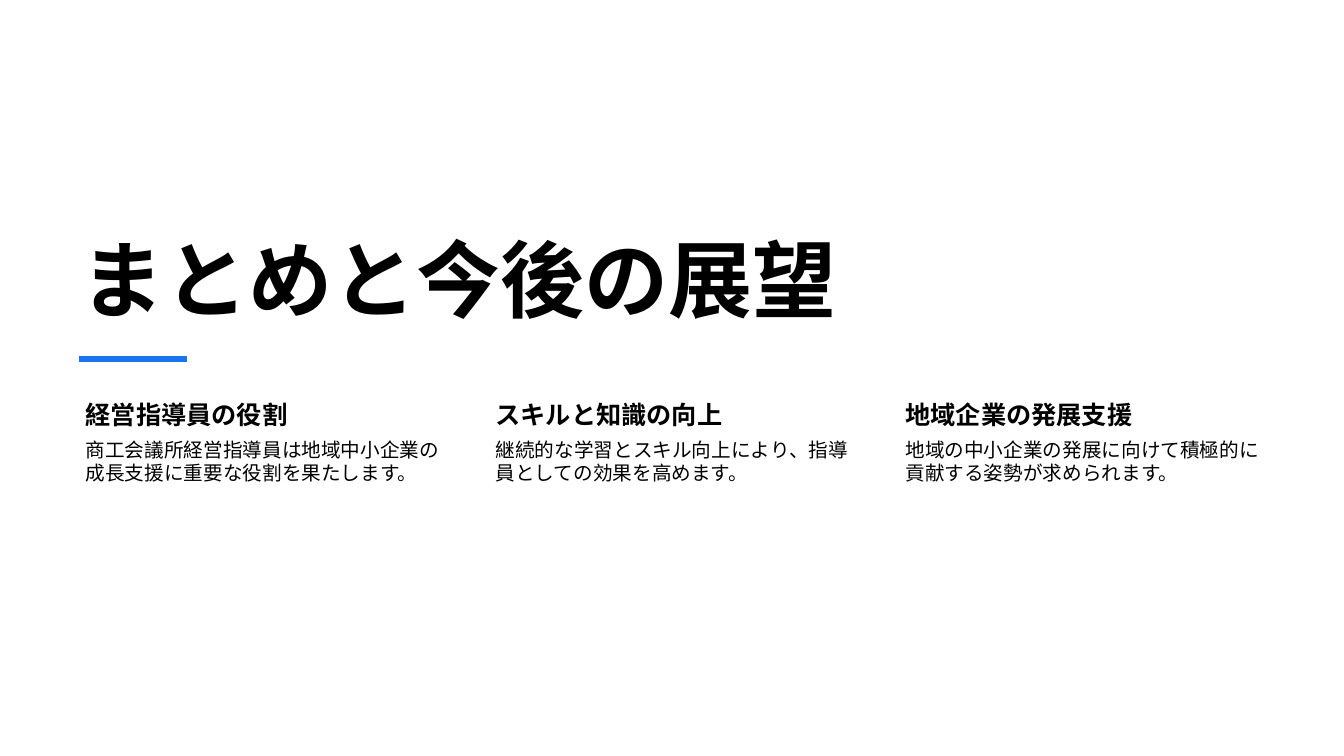
import pptx
import pptx.dml.color
import pptx.enum.shapes
import pptx.enum.text
import pptx.oxml
import pptx.oxml.ns
import pptx.util
from lxml import etree

Inches = pptx.util.Inches
FONT = "Calibri"
BLACK = "000000"
BLUE = "1973EB"
TAKEAWAYS = [
    ("経営指導員の役割", "商工会議所経営指導員は地域中小企業の成長支援に重要な役割を果たします。"),
    ("スキルと知識の向上", "継続的な学習とスキル向上により、指導員としての効果を高めます。"),
    ("地域企業の発展支援", "地域の中小企業の発展に向けて積極的に貢献する姿勢が求められます。"),
]


def color(hex_value):
    """Return the RGB colour for a hex string."""
    return pptx.dml.color.RGBColor.from_string(hex_value)


def write(frame, text, size, bold, margins, anchor):
    """Write one left-aligned run into a text frame with the given margins."""
    frame.word_wrap = True
    frame.auto_size = pptx.enum.text.MSO_AUTO_SIZE.NONE
    frame.vertical_anchor = anchor
    (frame.margin_left, frame.margin_top,
     frame.margin_right, frame.margin_bottom) = [Inches(m) for m in margins]
    paragraph = frame.paragraphs[0]
    paragraph.alignment = pptx.enum.text.PP_ALIGN.LEFT
    run = paragraph.add_run()
    run.text = text
    run.font.name = FONT
    run.font.size = pptx.util.Pt(size)
    run.font.bold = bold
    run.font.color.rgb = color(BLACK)
    east_asian = etree.SubElement(run.font._element, pptx.oxml.ns.qn("a:ea"))
    east_asian.set("typeface", FONT)


def place_title(slide, left, top, width, height):
    """Place the slide title at the bottom of its box."""
    title = slide.shapes.title
    title.left, title.top = Inches(left), Inches(top)
    title.width, title.height = Inches(width), Inches(height)
    write(title.text_frame, "まとめと今後の展望", 60, True, (0.1, 0.05, 0.1, 0),
          pptx.enum.text.MSO_ANCHOR.BOTTOM)


def add_accent(slide, left, top, width):
    """Draw the short accent rule under the title."""
    accent = slide.shapes.add_connector(
        pptx.enum.shapes.MSO_CONNECTOR.STRAIGHT,
        Inches(left), Inches(top), Inches(left + width), Inches(top))
    accent.line.color.rgb = color(BLUE)
    accent.line.width = pptx.util.Pt(4.5)
    etree.SubElement(accent._element.spPr, pptx.oxml.ns.qn("a:effectLst"))


def add_takeaway(slide, heading, detail, left, top, width, height):
    """Add a heading with its detail text below, filling the box."""
    heading_height = 0.39
    parts = [
        (heading, 18, True, 0.03, top, heading_height),
        (detail, 14, False, 0.02, top + heading_height, height - heading_height),
    ]
    for text, size, bold, margin, part_top, part_height in parts:
        part = slide.shapes.add_textbox(
            Inches(left), Inches(part_top), Inches(width), Inches(part_height))
        write(part.text_frame, text, size, bold, (0.15, margin, margin, margin),
              pptx.enum.text.MSO_ANCHOR.TOP)


def add_takeaways(slide, left, top, width, height):
    """Spread the takeaways over equal columns across the box."""
    column_width = 3.69
    step = (width - column_width) / (len(TAKEAWAYS) - 1)
    for index, (heading, detail) in enumerate(TAKEAWAYS):
        add_takeaway(slide, heading, detail, left + index * step, top, column_width, height)


def main():
    """Build and save the closing slide."""
    deck = pptx.Presentation()
    deck.slide_width, deck.slide_height = Inches(13.33), Inches(7.5)
    slide = deck.slides.add_slide(deck.slide_layouts.get_by_name("Title Only"))
    place_title(slide, 0.7, 1.72, 8.93, 1.54)
    add_takeaways(slide, 0.7, 3.93, 11.82, 2.73)
    add_accent(slide, 0.78, 3.56, 1.07)
    deck.save("out.pptx")


if __name__ == "__main__":
    main()
